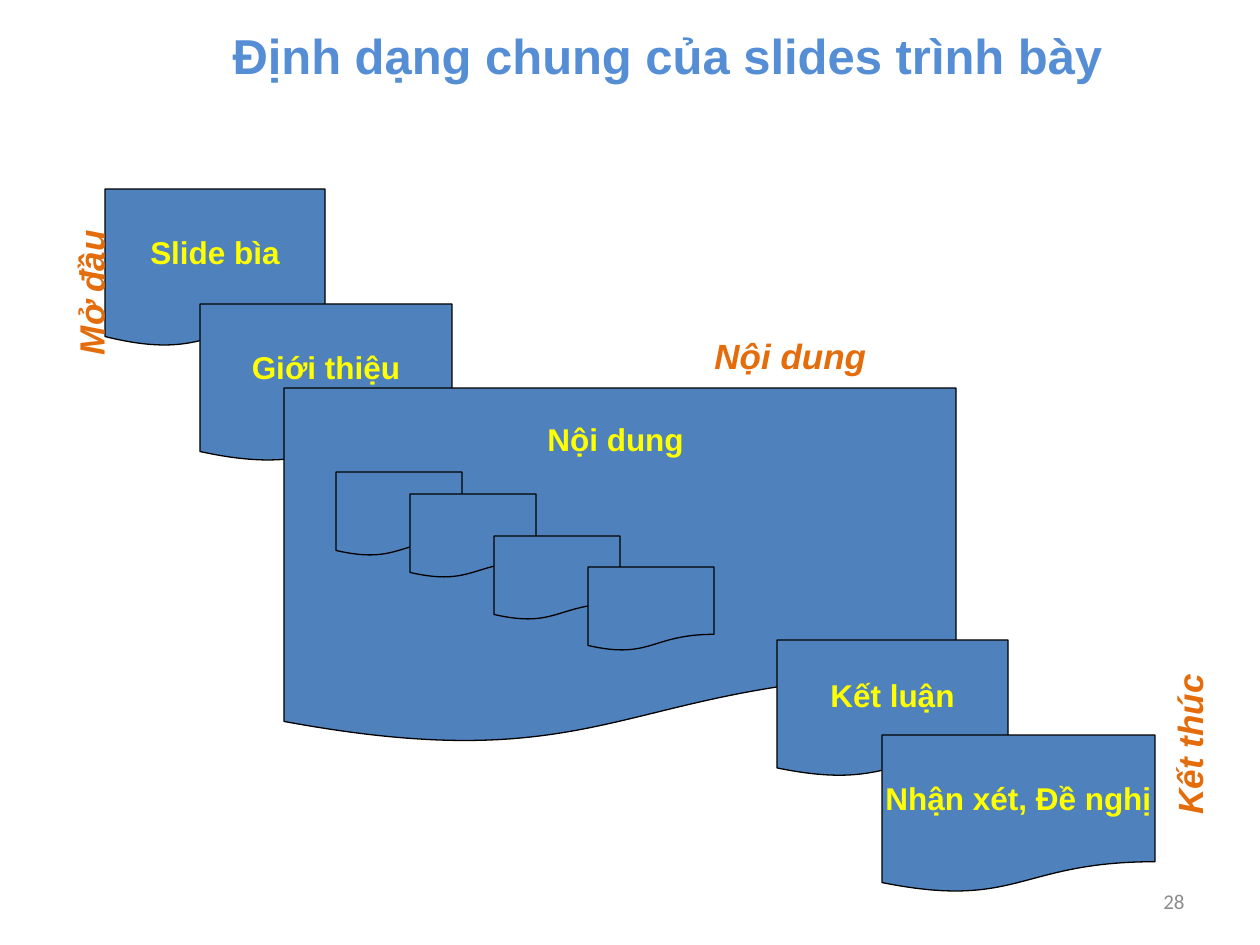
from dataclasses import dataclass

from pptx import Presentation
from pptx.dml.color import RGBColor
from pptx.enum.shapes import MSO_SHAPE as Preset
from pptx.enum.text import MSO_ANCHOR as Anchor, MSO_AUTO_SIZE as AutoSize, PP_ALIGN as Align
from pptx.util import Emu, Pt

SCALE = 914400 / 126


@dataclass(frozen=True)
class Theme:
    title: str = "558ED5"
    card: str = "4F81BD"
    outline: str = "000000"
    card_text: str = "FFFF00"
    label: str = "E46C0A"
    number: str = "8C8C8C"
    title_size: int = 28
    card_size: int = 18
    label_size: int = 20
    number_size: int = 12


theme = Theme()


def emu(*lengths):
    return [Emu(round(length * SCALE)) for length in lengths]


def write(shape, text, size, color, align, font="Arial", bold=True, italic=False):
    shape.text_frame.text = text
    paragraph = shape.text_frame.paragraphs[0]
    paragraph.alignment = align
    run_font = paragraph.runs[0].font
    run_font.name = font
    run_font.size = Pt(size)
    run_font.bold = bold
    run_font.italic = italic
    run_font.color.rgb = RGBColor.from_string(color)


presentation = Presentation()
presentation.slide_width, presentation.slide_height = emu(1260, 945)
slide = presentation.slides.add_slide(presentation.slide_layouts[6])

number = slide.shapes.add_textbox(*emu(903, 876, 294, 50))
number.text_frame.word_wrap = True
number.text_frame.vertical_anchor = Anchor.MIDDLE
write(number, "28", theme.number_size, theme.number, Align.RIGHT, "Calibri", bold=False)

title = slide.shapes.add_textbox(*emu(179, 21, 977, 67))
title.text_frame.word_wrap = True
title.text_frame.vertical_anchor = Anchor.MIDDLE
write(title, "Định dạng chung của slides trình bày", theme.title_size, theme.title, Align.CENTER)

cards = [
    ("Slide bìa", 105, 189, 220, 158),
    ("Giới thiệu", 200, 304, 252, 158),
    ("Nội dung ", 284, 388, 672, 357),
    ("Kết luận", 777, 640, 231, 137),
    ("Nhận xét, Đề nghị", 882, 735, 273, 158),
]
content_pages = [("", left, top, 126, 84)
                 for left, top in [(336, 472), (410, 494), (494, 536), (588, 567)]]

for text, *box in cards + content_pages:
    card = slide.shapes.add_shape(Preset.FLOWCHART_DOCUMENT, *emu(*box))
    card.shadow.inherit = False
    card.fill.solid()
    card.fill.fore_color.rgb = RGBColor.from_string(theme.card)
    card.line.color.rgb = RGBColor.from_string(theme.outline)
    card.line.width = Pt(0.75)
    if text:
        frame = card.text_frame
        frame.word_wrap = False
        frame.vertical_anchor = Anchor.MIDDLE
        write(card, text, theme.card_size, theme.card_text, Align.CENTER)
        if text.startswith("Nội dung"):
            frame.vertical_anchor = Anchor.TOP
            frame.margin_top, = emu(32)

labels = [
    ("Mở đầu", 270, 6, 256, 169, 54),
    ("Kết thúc", 270, 1096, 707, 186, 54),
    ("Nội dung", 0, 702, 328, 233, 55),
]
for text, rotation, *box in labels:
    label = slide.shapes.add_textbox(*emu(*box))
    label.rotation = rotation
    label.text_frame.word_wrap = True
    label.text_frame.auto_size = AutoSize.SHAPE_TO_FIT_TEXT
    write(label, text, theme.label_size, theme.label, Align.LEFT, italic=True)

presentation.save("out.pptx")
